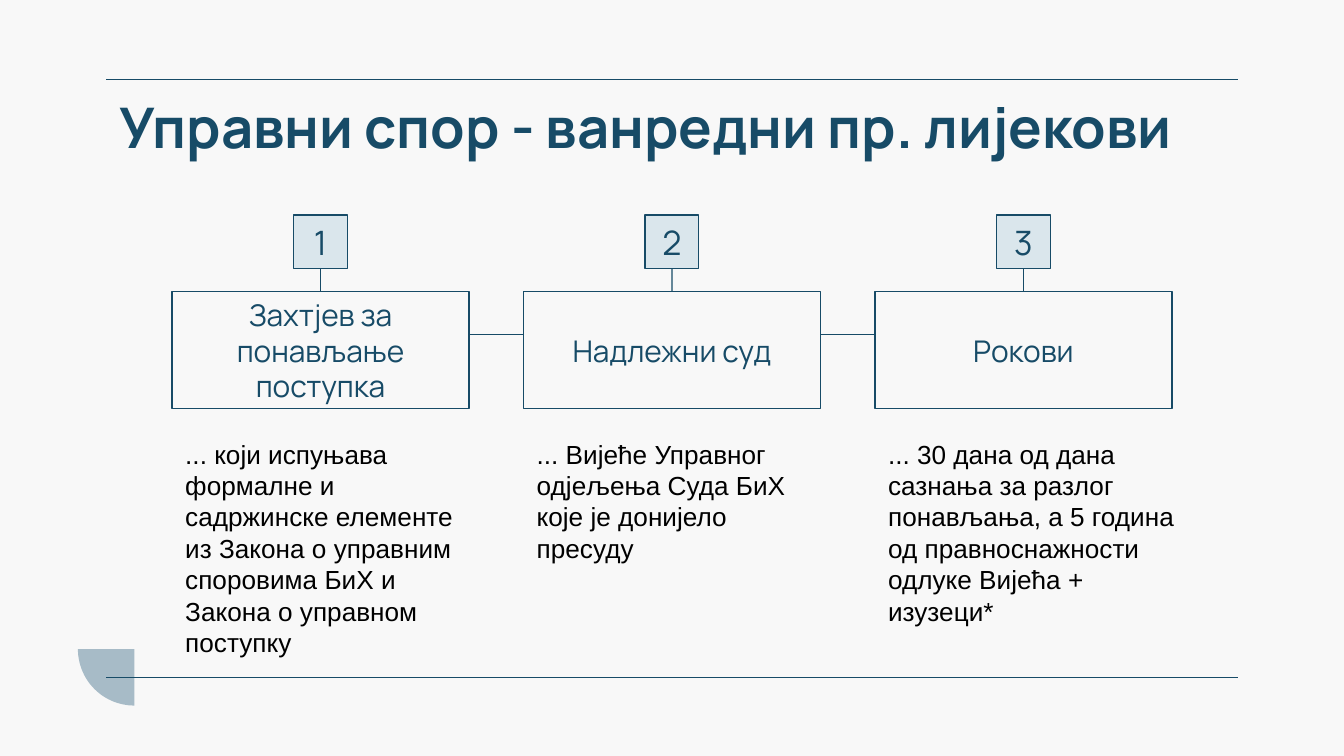
import math

import lxml.etree
import pptx
import pptx.dml.color
import pptx.enum.shapes
import pptx.enum.text
import pptx.oxml.ns
import pptx.util

Inches = pptx.util.Inches
Pt = pptx.util.Pt
RGBColor = pptx.dml.color.RGBColor
SHAPE = pptx.enum.shapes.MSO_SHAPE
CONNECTOR = pptx.enum.shapes.MSO_CONNECTOR
ALIGN = pptx.enum.text.PP_ALIGN
ANCHOR = pptx.enum.text.MSO_ANCHOR
AUTO_SIZE = pptx.enum.text.MSO_AUTO_SIZE

PAPER = RGBColor(0xF8, 0xF8, 0xF8)
NAVY = RGBColor(0x17, 0x4B, 0x67)
PALE_BLUE = RGBColor(0xDA, 0xE6, 0xEC)
GREY_BLUE = RGBColor(0xA7, 0xBB, 0xC7)
BLACK = RGBColor(0x00, 0x00, 0x00)

HEADING_FONT = "Manrope"
BODY_FONT = "Arial"

TITLE = "Управни спор - ванредни пр. лијекови"
STEPS = [
    ("Захтјев за понављање поступка",
     "... који испуњава формалне и садржинске елементе из Закона о управним "
     "споровима БиХ и Закона о управном поступку", 2.21, 1.75),
    ("Надлежни суд",
     "... Вијеће Управног одјељења Суда БиХ које је донијело пресуду", 2.21, 1.04),
    ("Рокови",
     "... 30 дана од дана сазнања за разлог понављања, а 5 година од "
     "правноснажности одлуке Вијећа + изузеци*", 2.37, 1.51),
]
STEP_WIDTH = 2.21
FIRST_LEFT, LAST_LEFT = 1.28, 6.51


def add_run(paragraph, text, size, font, color, bold=False):
    """Append one formatted run to a paragraph."""
    run = paragraph.add_run()
    run.text = text
    run.font.size = Pt(size)
    run.font.name = font
    run.font.bold = bold
    run.font.color.rgb = color


def add_line(slide, start, end, kind=CONNECTOR.STRAIGHT):
    """Draw a thin navy connector without a shadow."""
    line = slide.shapes.add_connector(kind, *map(Inches, start + end))
    line.line.color.rgb = NAVY
    line.line.width = Pt(0.75)
    lxml.etree.SubElement(line._element.spPr, pptx.oxml.ns.qn("a:effectLst"))
    return line


def add_text(slide, left, top, width, height):
    """Add a wrapping text box and return its frame."""
    frame = slide.shapes.add_textbox(*map(Inches, (left, top, width, height))).text_frame
    frame.word_wrap = True
    return frame


def add_label_box(slide, left, top, width, height, label, size, fill=None):
    """Add an outlined rectangle with a centred label."""
    box = slide.shapes.add_shape(SHAPE.RECTANGLE, *map(Inches, (left, top, width, height)))
    box.shadow.inherit = False
    if fill is None:
        box.fill.background()
    else:
        box.fill.solid()
        box.fill.fore_color.rgb = fill
    box.line.color.rgb = NAVY
    box.line.width = Pt(0.75)
    frame = box.text_frame
    frame.word_wrap = True
    frame.vertical_anchor = ANCHOR.MIDDLE
    frame.margin_left = frame.margin_right = Inches(0.1)
    frame.margin_top = frame.margin_bottom = Inches(0.1)
    frame.paragraphs[0].alignment = ALIGN.CENTER
    add_run(frame.paragraphs[0], label, size, HEADING_FONT, NAVY)
    return box


def add_quarter_disc(slide, left, top, radius):
    """Draw the lower-left quarter of a disc."""
    center = left + radius
    arc = [(center - radius * math.cos(math.radians(angle)),
            top + radius * math.sin(math.radians(angle))) for angle in range(0, 91, 3)]
    builder = slide.shapes.build_freeform(Inches(center), Inches(top))
    builder.add_line_segments([(Inches(x), Inches(y)) for x, y in arc], close=True)
    disc = builder.convert_to_shape()
    disc.shadow.inherit = False
    disc.fill.solid()
    disc.fill.fore_color.rgb = GREY_BLUE
    disc.line.fill.background()


def add_frame(slide, left, top, right, bottom):
    """Add the corner ornament and the two rules around the content."""
    add_quarter_disc(slide, left - 0.21, bottom - 0.21, 0.42)
    for y in (top, bottom):
        add_line(slide, (left, y), (right, y))


def add_title(slide, left, top, width, height):
    """Add the slide title."""
    frame = add_text(slide, left, top, width, height)
    frame.margin_top = frame.margin_bottom = Inches(0.1)
    add_run(frame.paragraphs[0], TITLE, 30, HEADING_FONT, NAVY, bold=True)


def add_step(slide, left, top, number, heading, note, note_width, note_height):
    """Add one numbered step with its heading box and note."""
    badge_size = 0.4
    badge_left = left + (STEP_WIDTH - badge_size) / 2
    heading_box = add_label_box(slide, left, top + 0.57, STEP_WIDTH, 0.87, heading, 16)
    badge = add_label_box(slide, badge_left, top, badge_size, badge_size,
                          str(number), 18, PALE_BLUE)
    center = left + STEP_WIDTH / 2
    stem = add_line(slide, (center, top + badge_size), (center, top + 0.57))
    stem.begin_connect(badge, 2)
    stem.end_connect(heading_box, 0)
    frame = add_text(slide, left, top + 1.61, note_width, note_height)
    frame.auto_size = AUTO_SIZE.SHAPE_TO_FIT_TEXT
    add_run(frame.paragraphs[0], note, 14, BODY_FONT, BLACK)


def add_steps(slide, top):
    """Space the steps evenly and link neighbouring heading boxes."""
    pitch = (LAST_LEFT - FIRST_LEFT) / (len(STEPS) - 1)
    for index, step in enumerate(STEPS):
        left = FIRST_LEFT + index * pitch
        add_step(slide, left, top, index + 1, *step)
        if index:
            link_y = top + 0.89
            add_line(slide, (left - pitch + STEP_WIDTH, link_y), (left, link_y),
                     CONNECTOR.ELBOW)


def main():
    """Build and save the widescreen slide."""
    deck = pptx.Presentation()
    deck.slide_width = Inches(10)
    deck.slide_height = deck.slide_width * 9 // 16
    slide = deck.slides.add_slide(deck.slide_layouts[6])
    slide.background.fill.solid()
    slide.background.fill.fore_color.rgb = PAPER
    add_frame(slide, 0.79, 0.59, 9.21, 5.04)
    add_title(slide, 0.79, 0.59, 8.43, 0.57)
    add_steps(slide, 1.6)
    deck.save("out.pptx")


if __name__ == "__main__":
    main()
